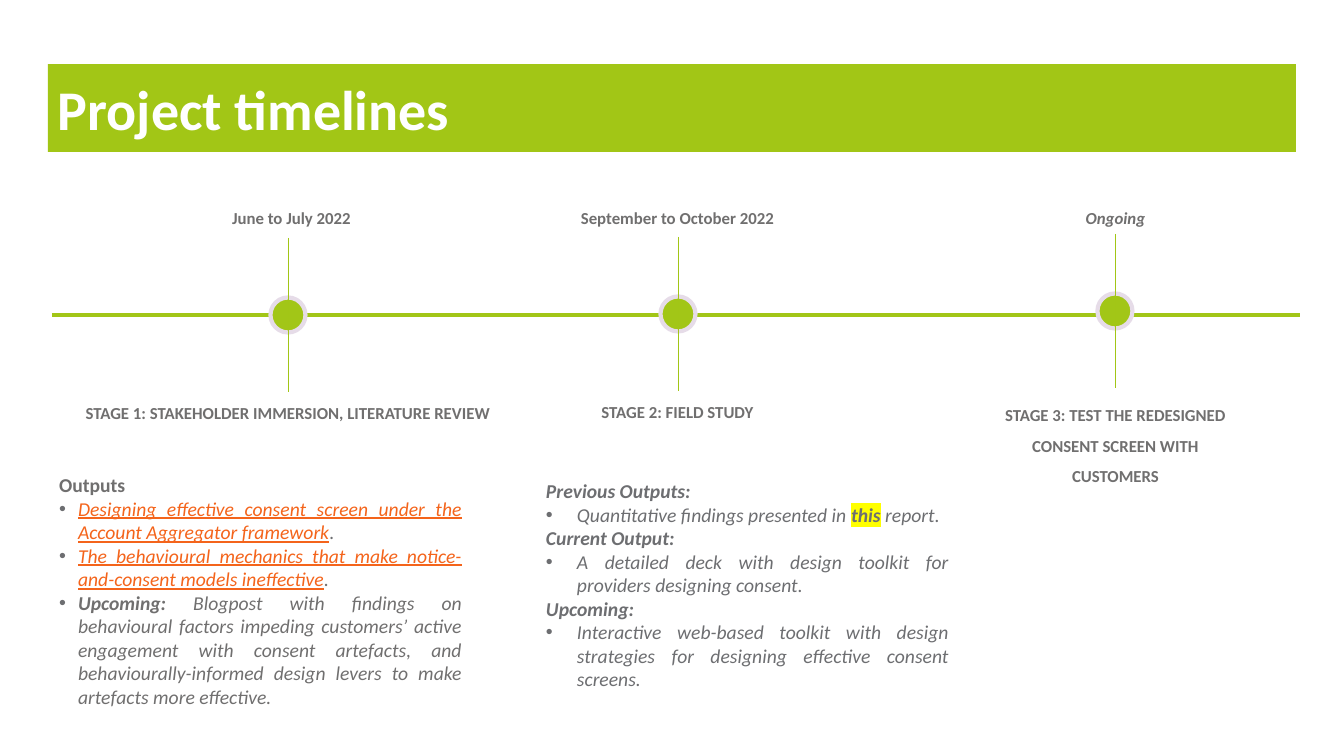
from lxml.etree import SubElement
from pptx import Presentation
from pptx.dml.color import RGBColor
from pptx.enum.shapes import MSO_CONNECTOR as Connector, MSO_SHAPE as Preset
from pptx.enum.text import MSO_ANCHOR as Anchor, MSO_AUTO_SIZE as AutoSize, PP_ALIGN as Align
from pptx.oxml.ns import qn
from pptx.util import Emu, Pt

EMU_PER_PX = 914400 / 100.8
GREEN, LIME, RING = "A2C617", "A2C616", "E6DCE8"
GREY, SLATE, ORANGE = "706F6F", "6D6E71", "F4641B"
WHITE, YELLOW = "FFFFFF", "FFFF00"


def px(length):
    return Emu(round(length * EMU_PER_PX))


def rgb(color):
    return RGBColor.from_string(color)


def set_font(font, color=None, size=None, bold=None, italic=None, underline=None):
    if color:
        font.color.rgb = rgb(color)
    if size:
        font.size = Pt(size)
    for name, value in (("bold", bold), ("italic", italic), ("underline", underline)):
        if value is not None:
            setattr(font, name, value)


class SlideBuilder:
    def __init__(self, slide, font_name="Calibri"):
        self.shapes = slide.shapes
        self.font_name = font_name

    def line(self, start, end, color, width):
        line = self.shapes.add_connector(Connector.STRAIGHT, *map(px, start + end))
        line.line.color.rgb = rgb(color)
        line.line.width = Pt(width)
        SubElement(line._element.spPr, qn("a:effectLst"))

    def shape(self, preset, bounds, fill, outline=None):
        shape = self.shapes.add_shape(preset, *map(px, bounds))
        shape.shadow.inherit = False
        shape.fill.solid()
        shape.fill.fore_color.rgb = rgb(fill)
        if outline:
            shape.line.color.rgb = rgb(outline)
            shape.line.width = Pt(3)
        else:
            shape.line.fill.background()
        return shape

    def text_box(self, bounds, inset=(10, 5)):
        box = self.shapes.add_textbox(*map(px, bounds))
        return self.frame(box, inset)

    def frame(self, box, inset):
        frame = box.text_frame
        frame.word_wrap = True
        frame.auto_size = AutoSize.SHAPE_TO_FIT_TEXT
        frame.margin_left = frame.margin_right = px(inset[0])
        frame.margin_top = frame.margin_bottom = px(inset[1])
        return frame

    def paragraph(self, frame, runs, align, indent=0, spacing=None, **style):
        first = frame.paragraphs[0]
        para = frame.add_paragraph() if first.runs else first
        para.alignment = align
        if spacing:
            para.line_spacing = spacing
        if indent:
            self.bullet(para, indent)
        para.font.name = self.font_name
        set_font(para.font, **style)
        for text, changes in runs:
            span = para.add_run()
            span.text = text
            changes = dict(changes)
            highlight = changes.pop("highlight", None)
            set_font(span.font, **changes)
            if highlight:
                mark = SubElement(span.font._element, qn("a:highlight"))
                SubElement(mark, qn("a:srgbClr"), val=highlight)

    def bullet(self, para, indent):
        props = para._p.get_or_add_pPr()
        props.set("marL", str(px(indent)))
        props.set("indent", str(-px(indent)))
        color = SubElement(props, qn("a:buClr"))
        SubElement(color, qn("a:srgbClr"), val=SLATE)
        SubElement(props, qn("a:buFont"), typeface="Arial")
        SubElement(props, qn("a:buChar"), char="•")

    def label(self, bounds, text, inset=(10, 5), spacing=None, italic=False):
        self.paragraph(self.text_box(bounds, inset), [(text, {})], Align.CENTER,
                       spacing=spacing, color=GREY, size=12, bold=True, italic=italic)

    def output_list(self, bounds, entries, indent, color, italic_heads):
        frame = self.text_box(bounds)
        for entry in entries:
            if isinstance(entry, str):
                self.paragraph(frame, [(entry, {})], Align.JUSTIFY, color=color,
                               size=14, bold=True, italic=italic_heads)
            else:
                self.paragraph(frame, entry, Align.JUSTIFY, indent, color=color,
                               size=14, italic=True)


# Stage: marker centre (x, y), date and its box, date style, name and its box
STAGES = [
    ((288, 315), "June to July 2022", (218, 147), False,
     "STAGE 1: STAKEHOLDER IMMERSION, LITERATURE REVIEW", (60, 386, 456, 44)),
    ((678, 314), "September to October 2022", (565, 225), False,
     "STAGE 2: FIELD STUDY", (547, 385, 261, 44)),
    ((1115, 311), "Ongoing", (1042, 147), True,
     "STAGE 3: TEST THE REDESIGNED CONSENT SCREEN WITH CUSTOMERS", (985, 388, 261, 105)),
]
MARKER, STEM = 35, 77

LINK = {"color": ORANGE, "underline": True}
BOLD = {"bold": True}
STAGE_1_OUTPUTS = [
    "Outputs",
    [("Designing effective consent screen under the Account Aggregator framework", LINK),
     (".", {"color": SLATE})],
    [("The behavioural mechanics that make notice-and-consent models ineffective", LINK),
     (".", {})],
    [("Upcoming: ", BOLD),
     ("Blogpost with findings on behavioural factors impeding customers’ active engagement "
      "with consent artefacts, and behaviourally-informed design levers to make artefacts "
      "more effective.", {})],
]
STAGE_2_OUTPUTS = [
    "Previous Outputs:",
    [("Quantitative findings presented in ", {}),
     ("this", {"bold": True, "highlight": YELLOW}),
     (" report.", {})],
    "Current Output:",
    [("A detailed deck with design toolkit for providers designing consent.", {})],
    "Upcoming:",
    [("Interactive web-based toolkit with design strategies for designing effective "
      "consent screens.", {})],
]


def main():
    deck = Presentation()
    deck.slide_width, deck.slide_height = px(1344), px(756)
    builder = SlideBuilder(deck.slides.add_slide(deck.slide_layouts[6]))

    # Title band
    band = builder.shape(Preset.RECTANGLE, (48, 64, 1248, 88), LIME)
    title = builder.frame(band, (10, 10))
    title.vertical_anchor = Anchor.MIDDLE
    builder.paragraph(title, [("Project timelines", {})], Align.LEFT,
                      color=WHITE, size=40, bold=True)

    # Timeline with its stages
    builder.line((52, 315), (1300, 315), GREEN, 3)
    for (x, y), date, (left, width), italic, name, bounds in STAGES:
        corner = (x - MARKER / 2, y - MARKER / 2)
        builder.shape(Preset.OVAL, (*corner, MARKER, MARKER), GREEN, RING)
        builder.line((x, y - STEM), (x, y + STEM), LIME, 0.5)
        builder.label((left, 203, width, 31), date, italic=italic)
        builder.label(bounds, name, inset=(13, 7), spacing=1.5)

    # Outputs of the first two stages
    builder.output_list((49, 468, 423, 225), STAGE_1_OUTPUTS, 19, GREY, False)
    builder.output_list((536, 474, 423, 225), STAGE_2_OUTPUTS, 31, SLATE, True)

    deck.save("out.pptx")


if __name__ == "__main__":
    main()
